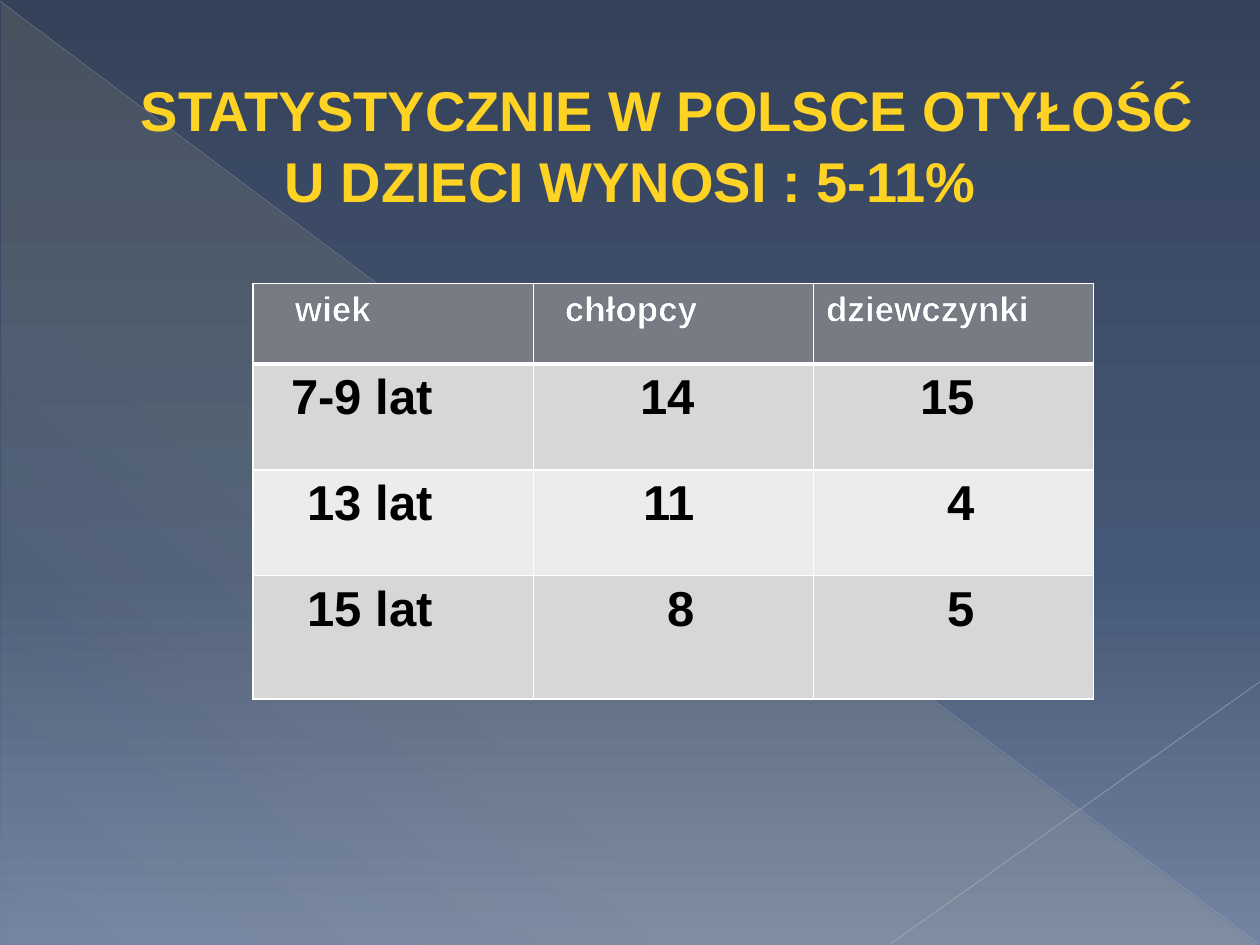
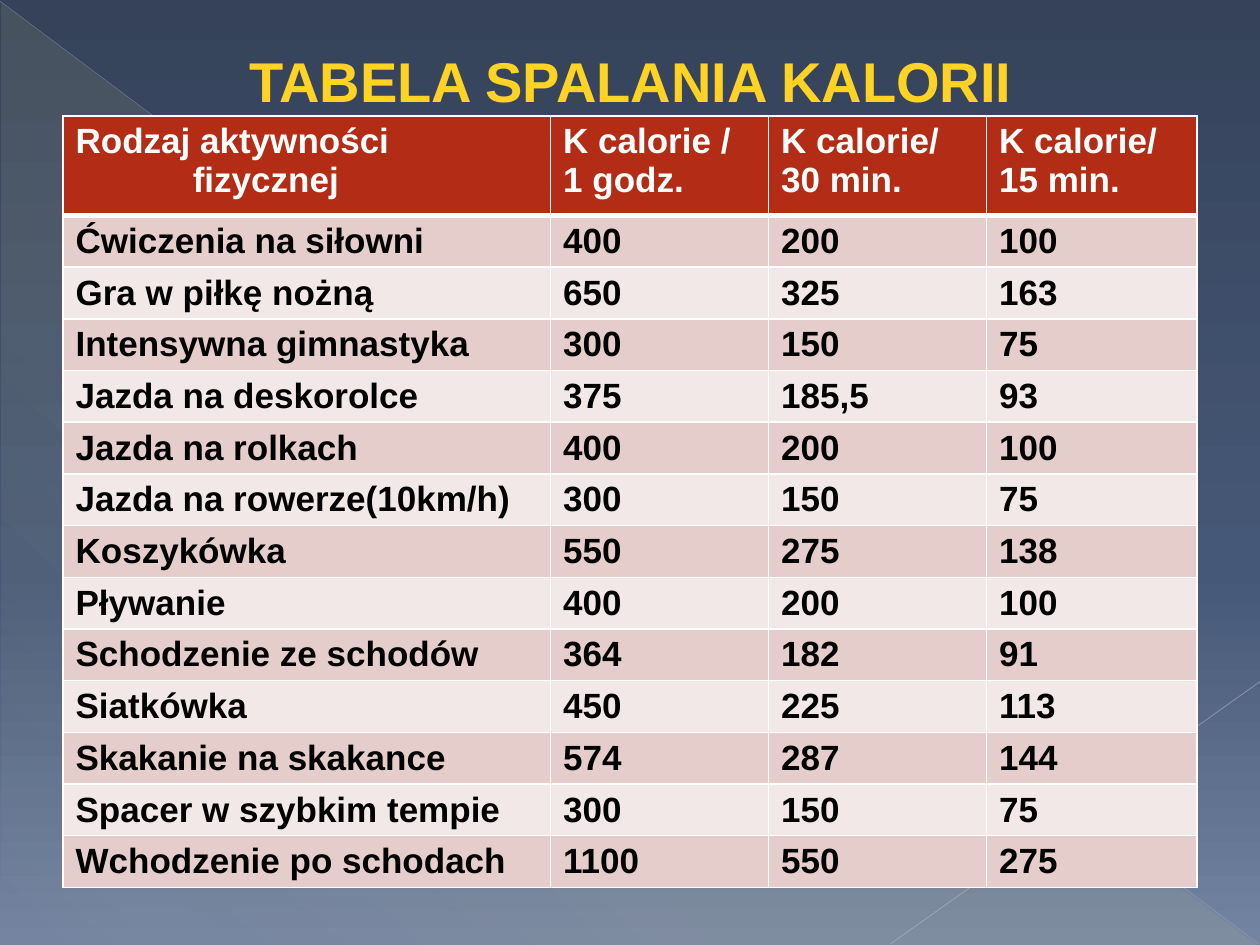
from lxml import etree
from pptx import Presentation
from pptx.dml.color import RGBColor
from pptx.enum.shapes import MSO_CONNECTOR, MSO_SHAPE
from pptx.enum.text import PP_ALIGN
from pptx.oxml.ns import qn
from pptx.util import Inches, Pt

LEFT, CENTER, RIGHT = PP_ALIGN.LEFT, PP_ALIGN.CENTER, PP_ALIGN.RIGHT
RT_TRIANGLE = MSO_SHAPE.RIGHT_TRIANGLE
STRAIGHT = MSO_CONNECTOR.STRAIGHT

FONT = "Arial"
C = {
    "bg_top": "35425A", "bg_mid": "465877", "bg_low": "7383A2",
    "glow": "FFF39D", "diagonal": "BABDC4", "corner": "C1C4CA",
    "title": "FFD323", "white": "FFFFFF", "black": "000000",
    "grey_head": "777C84", "grey_odd": "D6D7D9", "grey_even": "ECECED",
    "outline": "575F6D",
    "red_head": "B32C16", "red_odd": "E5CDCC", "red_even": "F2E8E8",
}
GREY = ("grey_head", "grey_odd", "grey_even")
RED = ("red_head", "red_odd", "red_even")

# Slide grid: 100 columns by 75 rows
W, H = Inches(10), Inches(7.5)
COL, ROW = W / 100, H / 75


def cols(n):
    return round(n * COL)


def rows(n):
    return round(n * ROW)


def rgb(name):
    return RGBColor.from_string(C[name])


# XML helpers
def color_xml(parent, name, opacity=100):
    clr = etree.SubElement(parent, qn("a:srgbClr"), val=C[name])
    if opacity < 100:
        etree.SubElement(clr, qn("a:alpha"), val=str(opacity * 1000))


def swap_gradient(parent, stops, angle):
    grad = etree.Element(qn("a:gradFill"), rotWithShape="1")
    gs_lst = etree.SubElement(grad, qn("a:gsLst"))
    for pos, name, opacity in stops:
        gs = etree.SubElement(gs_lst, qn("a:gs"), pos=str(pos * 1000))
        color_xml(gs, name, opacity)
    etree.SubElement(grad, qn("a:lin"), ang=str(angle * 60000), scaled="0")
    parent.replace(parent.find(qn("a:solidFill")), grad)


def line_xml(tag, name, width):
    ln = etree.Element(qn(tag), w=str(Pt(width)))
    color_xml(etree.SubElement(ln, qn("a:solidFill")), name)
    return ln


def add_run(p, text, size, color, outline=None):
    r = p.add_run()
    r.text = text
    r.font.name, r.font.size, r.font.bold = FONT, Pt(size), True
    r.font.color.rgb = rgb(color)
    if outline:
        r.font._element.insert(0, line_xml("a:ln", outline, 0.75))


def indent(p, columns):
    p._p.get_or_add_pPr().set("marL", str(cols(columns)))


# Shared backdrop
def add_ray(s, start, end, color, width, opacity):
    ray = s.shapes.add_connector(STRAIGHT, cols(start[0]), rows(start[1]),
                                 cols(end[0]), rows(end[1]))
    ray.line.width = Pt(width)
    ray.line.color.rgb = rgb(color)
    sp_pr = ray.element.spPr
    clr = sp_pr.find(".//" + qn("a:srgbClr"))
    etree.SubElement(clr, qn("a:alpha"), val=str(opacity * 1000))
    etree.SubElement(sp_pr, qn("a:effectLst"))


def add_backdrop(s):
    s.background.fill.solid()
    s.background.fill.fore_color.rgb = rgb("bg_top")
    swap_gradient(s.element.find(".//" + qn("p:bgPr")),
                  [(0, "bg_top", 100), (60, "bg_mid", 100),
                   (100, "bg_low", 100)], 90)
    sp = s.shapes.add_shape(RT_TRIANGLE, cols(0.1), rows(0.2),
                            cols(99.8), rows(74.8))
    sp.shadow.inherit = False
    sp.line.fill.background()
    sp.fill.solid()
    sp.fill.fore_color.rgb = rgb("glow")
    swap_gradient(sp.element.spPr,
                  [(0, "glow", 10), (70, "glow", 8), (100, "glow", 1)], 133)
    add_ray(s, (0, 0.1), (99.9, 74.9), "diagonal", 0.39, 35)
    add_ray(s, (100, 54.1), (70.7, 74.9), "corner", 0.47, 45)


# Title: lines are (text, indent in columns)
def add_title(s, box, lines):
    x, y, w, h = box
    tf = s.shapes.add_textbox(cols(x), rows(y), cols(w), rows(h)).text_frame
    tf.word_wrap = True
    for i, (text, shift) in enumerate(lines):
        p = tf.add_paragraph() if i else tf.paragraphs[0]
        p.alignment = CENTER
        p.line_spacing = 1.06
        if shift:
            indent(p, shift)
        add_run(p, text, 32, "title")


# Table
def set_borders(cell, top, bottom):
    tc_pr = cell._tc.get_or_add_tcPr()
    edges = (("a:lnL", 1), ("a:lnR", 1), ("a:lnT", top), ("a:lnB", bottom))
    for i, (tag, width) in enumerate(edges):
        tc_pr.insert(i, line_xml(tag, "white", width))


def add_grid(s, x, y, widths, heights, data, palette, body_size,
             outline=None, space=0):
    frame = s.shapes.add_table(len(heights), len(widths), cols(x), rows(y),
                               cols(sum(widths)), rows(sum(heights)))
    table = frame.table
    table.horz_banding = False
    for column, width in zip(table.columns, widths):
        column.width = cols(width)
    for row, height in zip(table.rows, heights):
        row.height = rows(height)
    head, odd, even = palette
    for i, record in enumerate(data):
        is_head = i == 0
        size = 20 if is_head else body_size
        for j, text in enumerate(record):
            cell = table.cell(i, j)
            cell.fill.solid()
            cell.fill.fore_color.rgb = rgb(
                head if is_head else odd if i % 2 else even)
            set_borders(cell, 3 if i == 1 else 1, 3 if is_head else 1)
            for k, line in enumerate(text.split("\n")):
                tf = cell.text_frame
                p = tf.add_paragraph() if k else tf.paragraphs[0]
                p.alignment = LEFT
                if space:
                    p.space_before = Pt(size * space)
                add_run(p, line, size, "white" if is_head else "black",
                        outline if is_head else None)
    return table


# Slide 1: obesity by age
def obesity_slide(s):
    add_backdrop(s)
    data = [("wiek", "chłopcy", "dziewczynki"),
            ("7-9 lat", "14", "15"),
            ("13 lat", "11", "4"),
            ("15 lat", "8", "5")]
    table = add_grid(s, 20.1, 22.5, [22.23] * 3, [6.4, 8.4, 8.4, 9.8], data,
                     GREY, 28, outline="outline", space=0.2)
    for j, (head_left, body_right) in enumerate([(3.3, 8), (2.5, 9.4),
                                                 (1, 9.4)]):
        table.cell(0, j).margin_left = cols(head_left)
        for i in range(1, len(data)):
            cell = table.cell(i, j)
            cell.margin_right = cols(body_right)
            cell.text_frame.paragraphs[0].alignment = RIGHT
    add_title(s, (-5.8, 5.2, 111.7, 11.8),
              [("STATYSTYCZNIE W POLSCE OTYŁOŚĆ", 5.9),
               ("U DZIECI WYNOSI : 5-11%", 0)])


# Slide 2: calories burnt per activity
def calories_slide(s):
    add_backdrop(s)
    data = [("Rodzaj aktywności\nfizycznej", "K calorie /\n1 godz.",
             "K calorie/\n30 min.", "K calorie/\n15 min."),
            ("Ćwiczenia na siłowni", "400", "200", "100"),
            ("Gra w piłkę nożną", "650", "325", "163"),
            ("Intensywna gimnastyka", "300", "150", "75"),
            ("Jazda na deskorolce", "375", "185,5", "93"),
            ("Jazda na rolkach", "400", "200", "100"),
            ("Jazda na rowerze(10km/h)", "300", "150", "75"),
            ("Koszykówka", "550", "275", "138"),
            ("Pływanie", "400", "200", "100"),
            ("Schodzenie ze schodów", "364", "182", "91"),
            ("Siatkówka", "450", "225", "113"),
            ("Skakanie na skakance", "574", "287", "144"),
            ("Spacer w szybkim tempie", "300", "150", "75"),
            ("Wchodzenie po schodach", "1100", "550", "275")]
    heights = [7.9] + [4.1] * (len(data) - 1)
    table = add_grid(s, 5, 9.2, [38.7, 17.3, 17.3, 16.7], heights, data,
                     RED, 20)
    indent(table.cell(0, 0).text_frame.paragraphs[1], 9.3)
    add_title(s, (-2.5, 2.9, 105.1, 6.4), [("TABELA SPALANIA KALORII", 0)])


def main():
    prs = Presentation()
    prs.slide_width, prs.slide_height = W, H
    blank = prs.slide_layouts[6]
    for build in (obesity_slide, calories_slide):
        build(prs.slides.add_slide(blank))
    prs.save("out.pptx")


if __name__ == "__main__":
    main()
